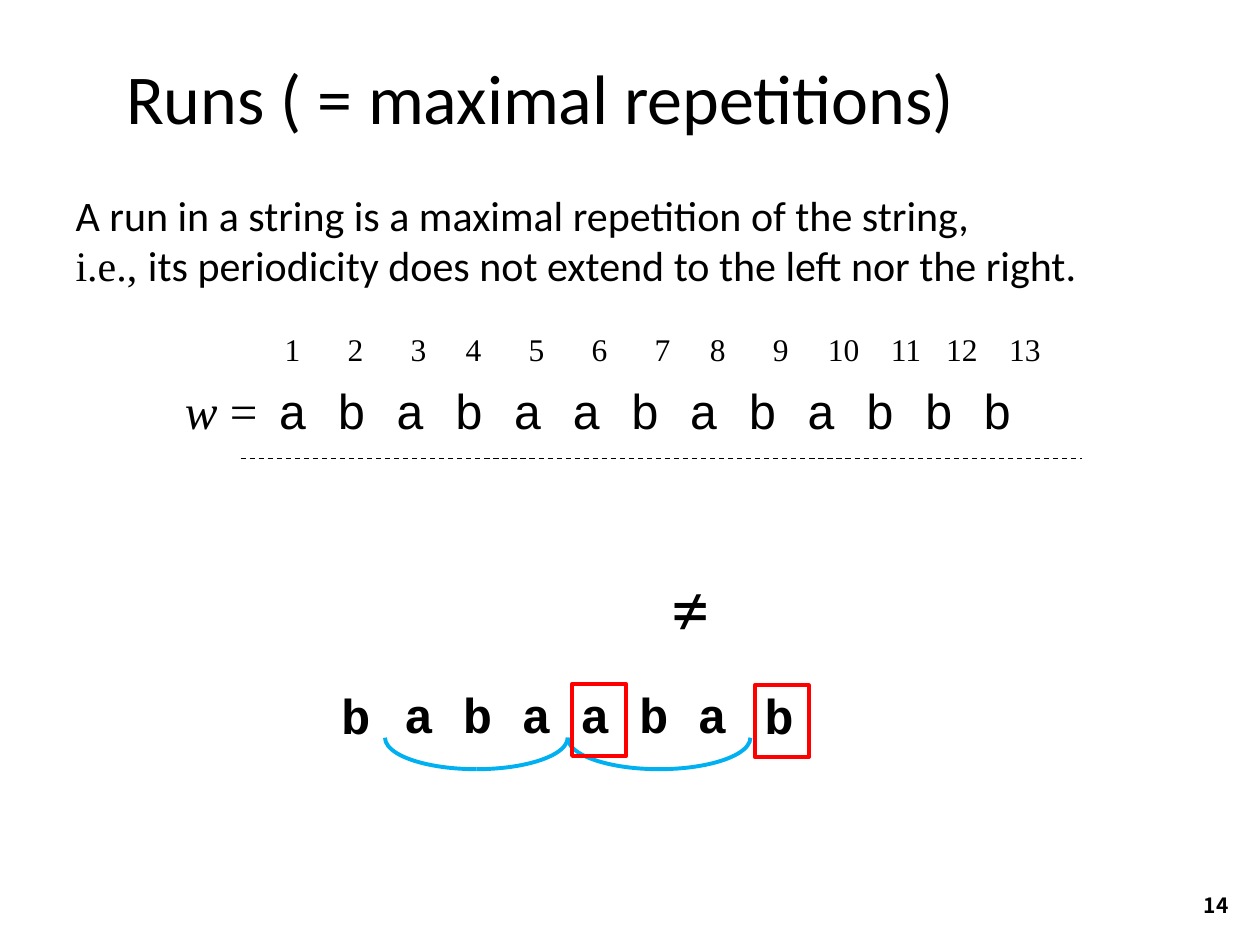
import pptx
import pptx.util
import pptx.dml.color
import pptx.enum.dml
import pptx.enum.shapes
import pptx.enum.text
import pptx.oxml

Pt = pptx.util.Pt
Align = pptx.enum.text.PP_ALIGN
Anchor = pptx.enum.text.MSO_ANCHOR
Auto = pptx.enum.text.MSO_AUTO_SIZE
Kind = pptx.enum.shapes.MSO_SHAPE
qn = pptx.oxml.ns.qn

SANS, SERIF, MONO = "Calibri", "Times New Roman", "Courier New"
BLACK, WHITE, RED, BLUE = "000000", "FFFFFF", "FF0000", "00B0F0"


def color(code):
    return pptx.dml.color.RGBColor.from_string(code)


class Deck:
    """Holds the text style and the current slide."""

    def __init__(self):
        self.file = pptx.Presentation()
        self.file.slide_width, self.file.slide_height = Pt(720), Pt(540)
        self.slide = self.file.slides.add_slide(self.file.slide_layouts[1])
        self.shapes = self.slide.shapes
        self.ink = BLACK

    def run(self, para, text, size, face, bold=False, slant=False):
        run = para.add_run()
        run.text = text
        font = run.font
        font.size, font.name = Pt(size), face
        font.bold, font.italic = bold, slant
        font.color.rgb = color(self.ink)

    def holder(self, index, box, anchor):
        """Move a placeholder and return its first paragraph."""
        item = self.slide.placeholders[index]
        item.left, item.top, item.width, item.height = map(Pt, box)
        frame = item.text_frame
        frame.auto_size, frame.vertical_anchor = Auto.NONE, anchor
        para = frame.paragraphs[0]
        para.alignment, para.space_before = Align.LEFT, Pt(0)
        return para

    def text(self, box, align=Align.LEFT, wrap=True, anchor=Anchor.TOP):
        """Add a text box and return its first paragraph."""
        frame = self.shapes.add_textbox(*map(Pt, box)).text_frame
        frame.word_wrap, frame.vertical_anchor = wrap, anchor
        para = frame.paragraphs[0]
        para.alignment = align
        return para

    def word(self, box, text, bold=True):
        self.run(self.text(box, Align.JUSTIFY), text, 28, MONO, bold)

    def shape(self, kind, box, line=None, fill=None, home=None):
        item = (home or self.shapes).add_shape(kind, *map(Pt, box))
        item.shadow.inherit = False
        if fill:
            item.fill.solid()
            item.fill.fore_color.rgb = color(fill)
        else:
            item.fill.background()
        if line:
            item.line.color.rgb, item.line.width = color(line), Pt(2.25)
        else:
            item.line.fill.background()
        return item

    def bowl(self, home, left, top):
        """Join two mirrored quarter arcs into one lower half."""
        for flip in (False, True):
            arc = self.shape(Kind.ARC, (left, top, 36, 104.4), BLUE, home=home)
            arc.rotation = 90
            if flip:
                arc.element.spPr.find(qn("a:xfrm")).set("flipV", "1")

    def rule(self, left, right, y):
        """Draw a dashed level line."""
        straight = pptx.enum.shapes.MSO_CONNECTOR.STRAIGHT
        item = self.shapes.add_connector(straight, Pt(left), Pt(y), Pt(right), Pt(y))
        item.line.color.rgb, item.line.width = color(self.ink), Pt(0.75)
        item.line.dash_style = pptx.enum.dml.MSO_LINE.DASH
        pptx.oxml.xmlchemy.OxmlElement
        props = item.element.spPr
        props.append(props.makeelement(qn("a:effectLst"), {}))

    def count(self, box, gaps):
        """Number the letters, each gap given in points."""
        para = self.text(box)
        props = para._p.get_or_add_pPr()
        tabs = props.makeelement(qn("a:tabLst"), {})
        props.append(tabs)
        stop = 0
        for num, gap in enumerate(gaps, 1):
            stop += 9 * len(str(num)) + gap
            tab = {"pos": str(Pt(stop)), "algn": "l"}
            tabs.append(tabs.makeelement(qn("a:tab"), tab))
        nums = range(1, len(gaps) + 2)
        self.run(para, "\t".join(map(str, nums)), 18, SERIF)


def main():
    deck = Deck()
    page = deck.text((660.2, 502.6, 49, 28.8), Align.RIGHT, anchor=Anchor.MIDDLE)
    deck.run(page, "14", 12, "Noto Sans CJK JP", bold=True)

    title = deck.holder(0, (64.8, 21.6, 619.2, 67), Anchor.MIDDLE)
    deck.run(title, "Runs ( = maximal repetitions)", 40, SANS)

    deck.word((151.9, 213.8, 452.2, 41), "a b a b a a b a b a b b b", bold=False)

    bowls = deck.shapes.add_group_shape().shapes
    for step in range(2):
        deck.bowl(bowls, 254.2 + 104.4 * step, 369.4)

    deck.word((223.9, 387.4, 204.5, 41), "a b a a b a")
    deck.rule(137.5, 618.5, 262.1)
    wide, mid, slim, thin = 27, 22.5, 18, 13.5
    gaps = [wide, wide, mid, wide, wide, wide, mid, wide, mid, slim, thin, slim]
    deck.count((155.5, 185, 483.1, 28.8), gaps)

    body = deck.holder(1, (36, 104.5, 673.2, 111.6), Anchor.TOP)
    props = body._p.get_or_add_pPr()
    props.set("marL", "0")
    props.set("indent", "0")
    props.append(props.makeelement(qn("a:buNone"), {}))
    deck.run(body, "A run in a string is a maximal repetition of the string,", 24, SANS)
    body.add_line_break()
    deck.run(body, "i.e., ", 24, SERIF)
    deck.run(body, "its periodicity does not extend to the left nor the right.", 24, SANS)

    for left in (187.9, 429.8):
        deck.word((left, 388.1, 31, 41), "b")
    for left, top in ((326.9, 391), (431.3, 391.7)):
        deck.shape(Kind.RECTANGLE, (left, top, 31, 41), RED)

    sign = deck.shape(Kind.RECTANGLE, (360.7, 316.1, 68.4, 69.1), fill=WHITE)
    sign.text_frame.vertical_anchor = Anchor.TOP
    para = sign.text_frame.paragraphs[0]
    para.alignment = Align.CENTER
    deck.run(para, "≠", 44, SANS)

    name = deck.text((98.6, 213.8, 58.3, 41), wrap=False)
    deck.run(name, "w", 28, SERIF, slant=True)
    deck.run(name, " =", 28, SERIF)
    deck.file.save("out.pptx")


if __name__ == "__main__":
    main()
